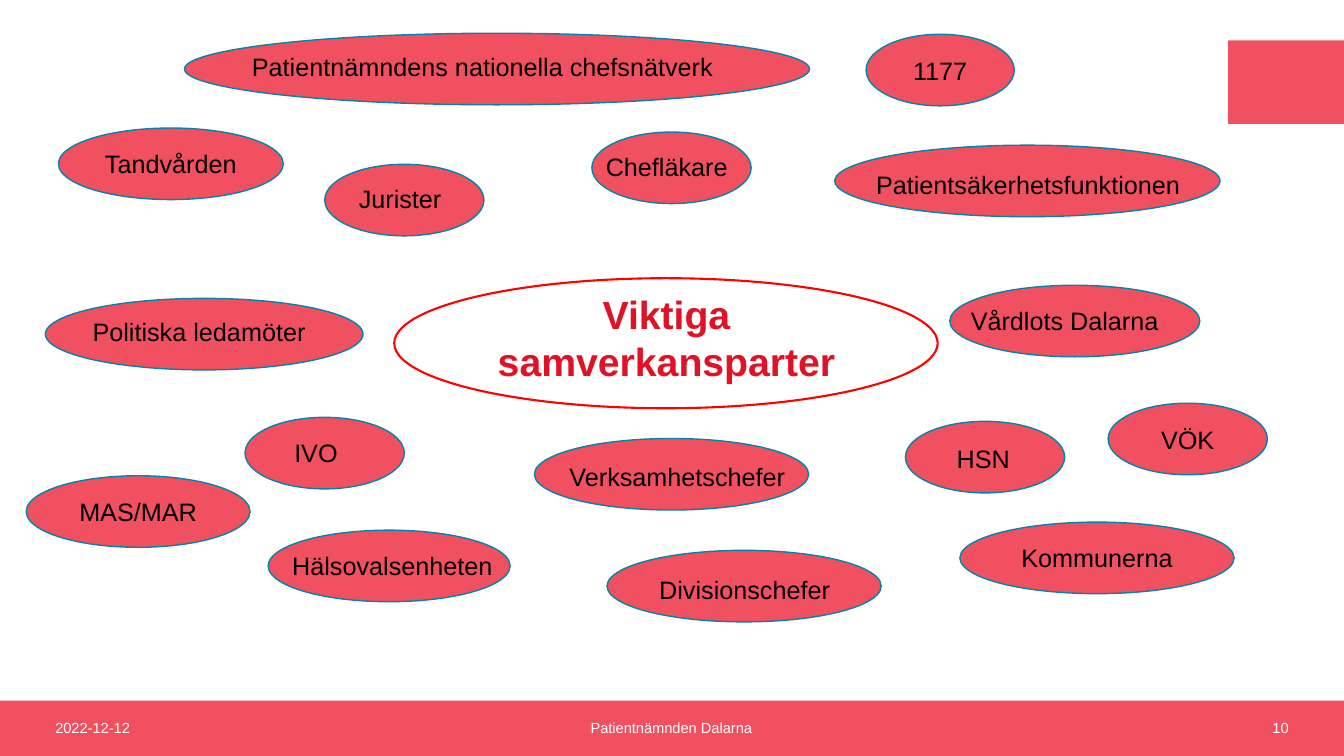
from dataclasses import dataclass
from typing import Optional

from lxml.etree import _Element as Element
from pptx import Presentation
from pptx.dml.color import RGBColor
from pptx.enum.shapes import MSO_SHAPE as Shape
from pptx.enum.text import MSO_ANCHOR as Anchor, PP_ALIGN as Align
from pptx.util import Inches, Pt

CORAL, TEAL, WHITE, BLACK = "F15060", "0085A9", "FFFFFF", "000000"
RED, TITLE_RED = "FF0000", "DF1226"
OVAL_HEIGHT, LABEL_HEIGHT = 0.71, 0.4
FOOTER_TOP, FOOTER_HEIGHT = 6.95, 0.54


@dataclass
class Label:
    left: float
    top: float
    width: float


@dataclass
class Partner:
    name: str
    left: float
    top: float
    width: float
    label: Optional[Label] = None  # without one, the name is centred in the oval


PARTNERS = [
    Partner("Verksamhetschefer", 5.3, 4.35, 2.72, Label(5.55, 4.53, 2.47)),
    Partner("Politiska ledamöter", 0.45, 2.96, 3.15, Label(0.82, 3.09, 2.63)),
    Partner("Patientsäkerhetsfunktionen", 8.28, 1.44, 3.82, Label(8.59, 1.63, 3.31)),
    Partner("Jurister", 3.22, 1.63, 1.58, Label(3.46, 1.77, 1.11)),
    Partner("Chefläkare", 5.87, 1.31, 1.58, Label(5.91, 1.45, 1.48)),
    Partner("Vårdlots Dalarna", 9.42, 2.83, 2.48, Label(9.53, 2.98, 2.25)),
    Partner("HSN", 8.98, 4.18, 1.58, Label(9.39, 4.35, 0.99)),
    Partner("Patientnämndens nationella chefsnätverk", 1.83, 0.33, 6.2,
            Label(2.4, 0.46, 5.32)),
    Partner("IVO", 2.43, 4.14, 1.58, Label(2.82, 4.29, 0.81)),
    Partner("Hälsovalsenheten", 2.66, 5.26, 2.4, Label(2.8, 5.41, 2.26)),
    Partner("Divisionschefer", 6.02, 5.46, 2.72, Label(6.44, 5.65, 2.26)),
    Partner("Kommunerna", 9.52, 5.18, 2.72),
    Partner("MAS/MAR", 0.26, 4.72, 2.22),
    Partner("1177", 8.59, 0.34, 1.47),
    Partner("Tandvården", 0.58, 1.27, 2.23),
    Partner("VÖK", 10.99, 4, 1.58),
]


def colour(value: str) -> RGBColor:
    return RGBColor.from_string(value)


def write(box, text: str, *, size: float = 18, color: str = BLACK, bold: bool = False,
          align: Align = Align.LEFT, anchor: Anchor = Anchor.TOP) -> None:
    frame = box.text_frame
    frame.word_wrap = True
    frame.vertical_anchor = anchor
    para = frame.paragraphs[0]
    para.alignment = align
    span = para.add_run()
    span.text = text
    span.font.name = "Arial"
    span.font.size = Pt(size)
    span.font.bold = bold
    span.font.color.rgb = colour(color)


def add_figure(page, kind: Shape, left: float, top: float, width: float, height: float, *,
               fill: str = CORAL, line: Optional[str] = None, weight: float = 1):
    figure = page.shapes.add_shape(
        kind, Inches(left), Inches(top), Inches(width), Inches(height))
    figure.shadow.inherit = False
    figure.fill.solid()
    figure.fill.fore_color.rgb = colour(fill)
    if line:
        figure.line.color.rgb = colour(line)
        figure.line.width = Pt(weight)
    else:
        figure.line.fill.background()
    return figure


def add_text(page, text: str, left: float, top: float, width: float, height: float,
             **style) -> None:
    box = page.shapes.add_textbox(Inches(left), Inches(top), Inches(width), Inches(height))
    write(box, text, **style)


def add_partner(page, partner: Partner) -> None:
    oval = add_figure(page, Shape.OVAL, partner.left, partner.top, partner.width,
                      OVAL_HEIGHT, line=TEAL)
    label = partner.label
    if label:
        add_text(page, partner.name, label.left, label.top, label.width, LABEL_HEIGHT)
    else:
        write(oval, partner.name, align=Align.CENTER, anchor=Anchor.MIDDLE)


def add_title(page, text: str) -> None:
    add_figure(page, Shape.OVAL, 3.91, 2.76, 5.39, 1.29, fill=WHITE, line=RED, weight=1.5)
    title = page.shapes.title
    title.left, title.top = Inches(4.18), Inches(2.83)
    title.width, title.height = Inches(4.86), Inches(1.04)
    write(title, text, size=28, color=TITLE_RED, bold=True, align=Align.CENTER)
    # Bring the title in front of its oval
    tree: Element = title.element.getparent()
    tree.append(title.element)


def add_footer(page) -> None:
    for text, left, width, align in [
        ("2022-12-12", 0.45, 3, Align.LEFT),
        ("Patientnämnden Dalarna", 3.91, 5.5, Align.CENTER),
        ("10", 9.88, 3, Align.RIGHT),
    ]:
        add_text(page, text, left, FOOTER_TOP, width, FOOTER_HEIGHT, size=10.5,
                 color=WHITE, align=align, anchor=Anchor.MIDDLE)


def main() -> None:
    deck = Presentation()
    deck.slide_width, deck.slide_height = Inches(13.33), Inches(7.5)
    page = deck.slides.add_slide(deck.slide_layouts.get_by_name("Title Only"))

    # Footer band and corner block
    add_figure(page, Shape.RECTANGLE, 0, FOOTER_TOP, 13.33, 0.55)
    add_figure(page, Shape.RECTANGLE, 12.18, 0.4, 1.15, 0.83)
    add_footer(page)

    # Central theme and the partners around it
    add_title(page, "Viktiga samverkansparter")
    for partner in PARTNERS:
        add_partner(page, partner)

    deck.save("out.pptx")


if __name__ == "__main__":
    main()
